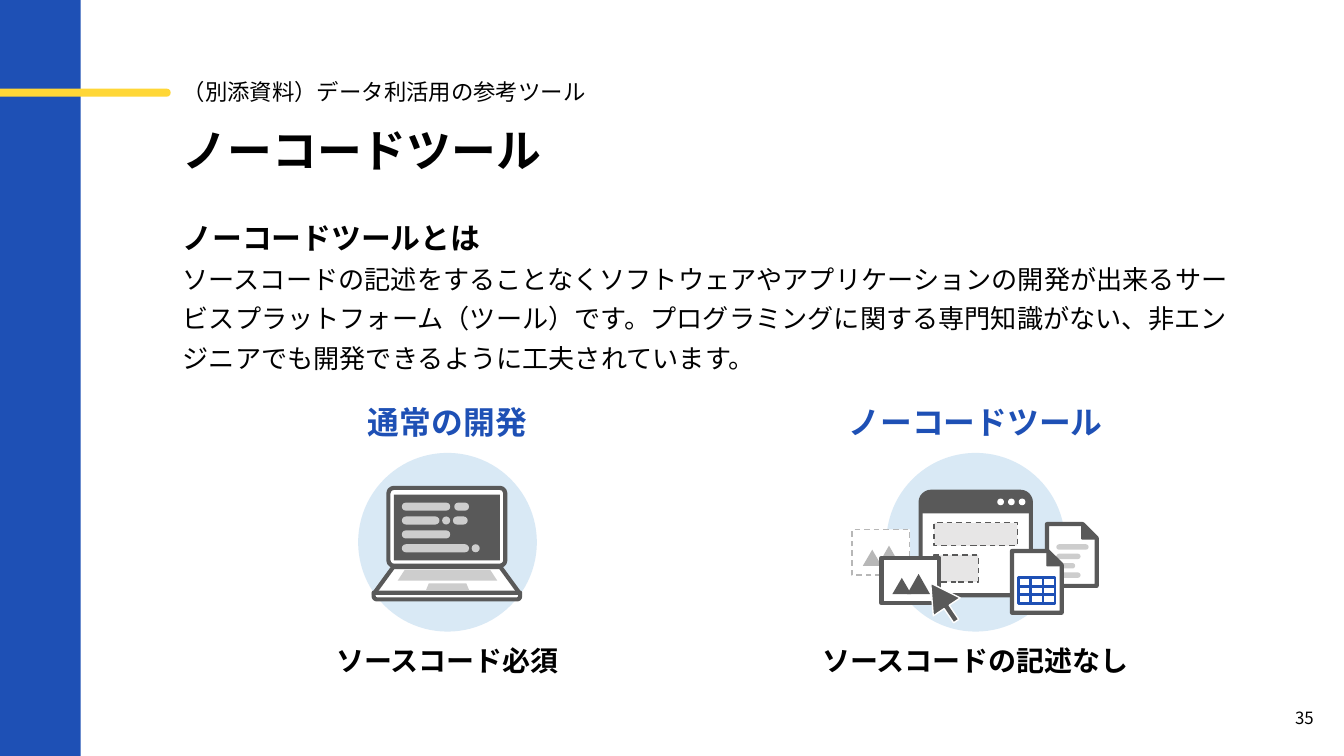
import dataclasses

import pptx
import pptx.dml.color
import pptx.enum.dml
import pptx.enum.lang
import pptx.enum.shapes
import pptx.enum.text
import pptx.oxml
import pptx.oxml.ns
import pptx.util

Inches = pptx.util.Inches
SHAPE = pptx.enum.shapes.MSO_SHAPE
ALIGN = pptx.enum.text.PP_ALIGN
ANCHOR = pptx.enum.text.MSO_ANCHOR
PAGE_WIDTH = 10
PAGE_HEIGHT = PAGE_WIDTH * 9 / 16


@dataclasses.dataclass(frozen=True)
class Theme:
    font: str = "Noto Sans CJK JP"
    blue: str = "1E50B5"
    yellow: str = "FFD737"
    circle: str = "0070C0"
    dark: str = "595959"
    silver: str = "CDCDCD"
    faded: str = "B7B7B7"
    panel: str = "E7E6E6"
    white: str = "FFFFFF"
    black: str = "000000"
    title: int = 24
    label: int = 17
    heading: int = 16
    caption: int = 15
    body: int = 14
    subtitle: int = 12
    number: int = 9
    outline: float = 2.25
    grid: float = 1.5
    hairline: float = 0.75


THEME = Theme()


def rgb(color):
    return pptx.dml.color.RGBColor.from_string(color)


def set_line(line, color, width, dashed=False):
    line.color.rgb = rgb(color)
    line.width = pptx.util.Pt(width)
    if dashed:
        line.dash_style = pptx.enum.dml.MSO_LINE.DASH


def add_shape(parent, kind, area, fill=None, line=None, width=THEME.outline,
              dashed=False, adjust=(), rotation=0):
    shape = parent.shapes.add_shape(kind, *map(Inches, area))
    shape.shadow.inherit = False
    shape.rotation = rotation
    for index, value in enumerate(adjust):
        shape.adjustments[index] = value
    if fill:
        shape.fill.solid()
        shape.fill.fore_color.rgb = rgb(fill)
    else:
        shape.fill.background()
    if line:
        set_line(shape.line, line, width, dashed)
    else:
        shape.line.fill.background()
    return shape


def add_pill(parent, area, fill=THEME.silver):
    return add_shape(parent, SHAPE.ROUNDED_RECTANGLE, area, fill, adjust=[0.5])


def add_line(parent, start, end):
    line = parent.shapes.add_connector(
        pptx.enum.shapes.MSO_CONNECTOR.STRAIGHT, *map(Inches, start + end))
    set_line(line.line, THEME.blue, THEME.grid)
    line._element.spPr.append(pptx.oxml.parse_xml(
        f"<a:effectLst {pptx.oxml.ns.nsdecls('a')}/>"))


def add_text(page, area, lines, color=THEME.black, align=ALIGN.LEFT,
             anchor=ANCHOR.TOP, spacing=None):
    frame = page.shapes.add_textbox(*map(Inches, area)).text_frame
    frame.word_wrap = True
    frame.vertical_anchor = anchor
    frame.margin_left = frame.margin_right = 0
    frame.margin_top = frame.margin_bottom = 0
    frame.text = "\n".join(words for words, size, bold in lines)
    for para, (words, size, bold) in zip(frame.paragraphs, lines):
        para.alignment = align
        para.line_spacing = spacing
        font = para.runs[0].font
        font.size = pptx.util.Pt(size)
        font.bold = bold
        font.name = THEME.font
        font.language_id = pptx.enum.lang.MSO_LANGUAGE_ID.JAPANESE
        font.color.rgb = rgb(color)
        east_asian = pptx.oxml.parse_xml(
            f'<a:ea {pptx.oxml.ns.nsdecls("a")} typeface="{THEME.font}"/>')
        font._element.find(pptx.oxml.ns.qn("a:latin")).addnext(east_asian)


def add_circle(page, left):
    circle = add_shape(page, SHAPE.OVAL, (left, 3.37, 1.33, 1.33), THEME.circle)
    color = circle._element.spPr.find(".//" + pptx.oxml.ns.qn("a:srgbClr"))
    color.append(pptx.oxml.parse_xml(
        f'<a:alpha {pptx.oxml.ns.nsdecls("a")} val="15000"/>'))


def add_laptop(page):
    laptop = page.shapes.add_group_shape()
    add_shape(laptop, SHAPE.ROUNDED_RECTANGLE, (2.89, 3.63, 0.87, 0.58),
              THEME.white, THEME.dark, adjust=[0.07])
    add_shape(laptop, SHAPE.TRAPEZOID, (2.78, 4.22, 1.09, 0.2),
              THEME.white, THEME.dark, adjust=[0.73])
    add_shape(laptop, SHAPE.ROUND_2_SAME_RECTANGLE, (2.78, 4.41, 1.09, 0.05),
              THEME.white, THEME.dark, adjust=[0.47, 0], rotation=180)
    add_shape(laptop, SHAPE.TRAPEZOID, (2.96, 4.24, 0.74, 0.08),
              THEME.silver, adjust=[0.65])
    add_shape(laptop, SHAPE.RECTANGLE, (2.93, 3.68, 0.79, 0.49), THEME.dark)
    add_shape(laptop, SHAPE.TRAPEZOID, (3.17, 4.34, 0.32, 0.05),
              THEME.silver, adjust=[0.41])
    code_rows = [
        [(2.99, 0.36), (3.38, 0.11)],
        [(2.99, 0.28), (3.29, 0.06), (3.37, 0.11)],
        [(2.99, 0.36)],
        [(2.99, 0.5), (3.51, 0.06)],
    ]
    for row, pieces in enumerate(code_rows):
        for left, width in pieces:
            add_pill(laptop, (left, 3.74 + row * 0.31 / 3, width, 0.06))


def add_window(page):
    window = page.shapes.add_group_shape()
    add_shape(window, SHAPE.ROUNDED_RECTANGLE, (6.85, 3.66, 0.82, 0.77),
              THEME.white, THEME.dark, adjust=[0.1])
    add_shape(window, SHAPE.ROUND_2_SAME_RECTANGLE, (6.85, 3.66, 0.82, 0.16),
              THEME.dark, adjust=[0.46, 0])
    for index in range(3):
        add_shape(window, SHAPE.OVAL, (7.42 + index * 0.08, 3.71, 0.05, 0.05),
                  THEME.white)
    for area in [(6.95, 3.89, 0.62, 0.17), (6.95, 4.13, 0.33, 0.2)]:
        add_shape(window, SHAPE.RECTANGLE, area, THEME.panel, THEME.dark,
                  THEME.hairline, dashed=True)


def add_document(page, left, top):
    document = page.shapes.add_group_shape()
    add_shape(document, SHAPE.SNIP_1_RECTANGLE, (left, top, 0.37, 0.46),
              THEME.white, THEME.dark, adjust=[0.28])
    add_shape(document, SHAPE.RIGHT_TRIANGLE, (left + 0.26, top, 0.11, 0.11),
              THEME.dark, THEME.dark, THEME.hairline)
    return document


def add_text_document(page):
    document = add_document(page, 7.79, 3.9)
    for row, width in enumerate([0.24, 0.18, 0.14, 0.18]):
        add_pill(document, (7.86, 4.05 + row * 0.07, width, 0.04))


def add_table_document(page):
    document = add_document(page, 7.53, 4.1)
    left, top, width, height = 7.58, 4.3, 0.27, 0.19
    for step in (1, 2):
        row = top + step * height / 3
        column = left + step * width / 3
        add_line(document, (left, row), (left + width, row))
        add_line(document, (column, top), (column, top + height))
    add_shape(document, SHAPE.RECTANGLE, (left, top, width, height),
              line=THEME.blue, width=THEME.grid)


def add_image_card(page, left, top, color, width, dashed=False):
    card = page.shapes.add_group_shape()
    add_shape(card, SHAPE.RECTANGLE, (left, top, 0.43, 0.34), THEME.white,
              color, width, dashed)
    for x, y, base, height in [(0.19, 0.12, 0.17, 0.15), (0.08, 0.15, 0.14, 0.12)]:
        add_shape(card, SHAPE.ISOSCELES_TRIANGLE,
                  (left + x, top + y, base, height), color)


def add_cursor(page):
    add_shape(page, SHAPE.UP_ARROW, (6.9, 4.31, 0.24, 0.34), THEME.dark,
              THEME.white, THEME.hairline, adjust=[0.19, 0.89], rotation=326.1)


def add_header(page):
    add_shape(page, SHAPE.RECTANGLE, (0, 0, 0.6, PAGE_HEIGHT), THEME.blue)
    add_pill(page, (-0.11, 0.66, 1.38, 0.06), THEME.yellow)
    add_text(page, (1.36, 0.91, 7.87, 0.4),
             [("ノーコードツール", THEME.title, True)])
    add_text(page, (1.36, 1.57, 7.87, 1.22), [
        ("ノーコードツールとは", THEME.heading, True),
        ("ソースコードの記述をすることなくソフトウェアやアプリケーションの開発が"
         "出来るサービスプラットフォーム（ツール）です。プログラミングに関する"
         "専門知識がない、非エンジニアでも開発できるように工夫されています。",
         THEME.body, False)], spacing=1.25)
    add_text(page, (1.36, 0.55, 7.87, 0.27),
             [("（別添資料）データ利活用の参考ツール", THEME.subtitle, False)],
             anchor=ANCHOR.MIDDLE)
    add_text(page, (9.49, 5.13, 0.43, 0.43), [("35", THEME.number, False)],
             align=ALIGN.CENTER, anchor=ANCHOR.MIDDLE)


def add_comparison(page, center, label, caption):
    add_circle(page, center - 1.33 / 2)
    add_text(page, (center - 1.18, 3, 2.36, 0.29),
             [(label, THEME.label, True)], THEME.blue, ALIGN.CENTER)
    add_text(page, (center - 1.18, 4.79, 2.36, 0.25),
             [(caption, THEME.caption, True)], align=ALIGN.CENTER)


def main():
    deck = pptx.Presentation()
    deck.slide_width, deck.slide_height = Inches(PAGE_WIDTH), Inches(PAGE_HEIGHT)
    page = deck.slides.add_slide(deck.slide_layouts[6])
    add_header(page)
    add_comparison(page, 3.33, "通常の開発", "ソースコード必須")
    add_comparison(page, 7.26, "ノーコードツール", "ソースコードの記述なし")
    add_laptop(page)
    add_window(page)
    add_text_document(page)
    add_table_document(page)
    add_image_card(page, 6.34, 3.94, THEME.faded, THEME.hairline, dashed=True)
    add_image_card(page, 6.56, 4.15, THEME.dark, THEME.outline)
    add_cursor(page)
    deck.save("out.pptx")


if __name__ == "__main__":
    main()
